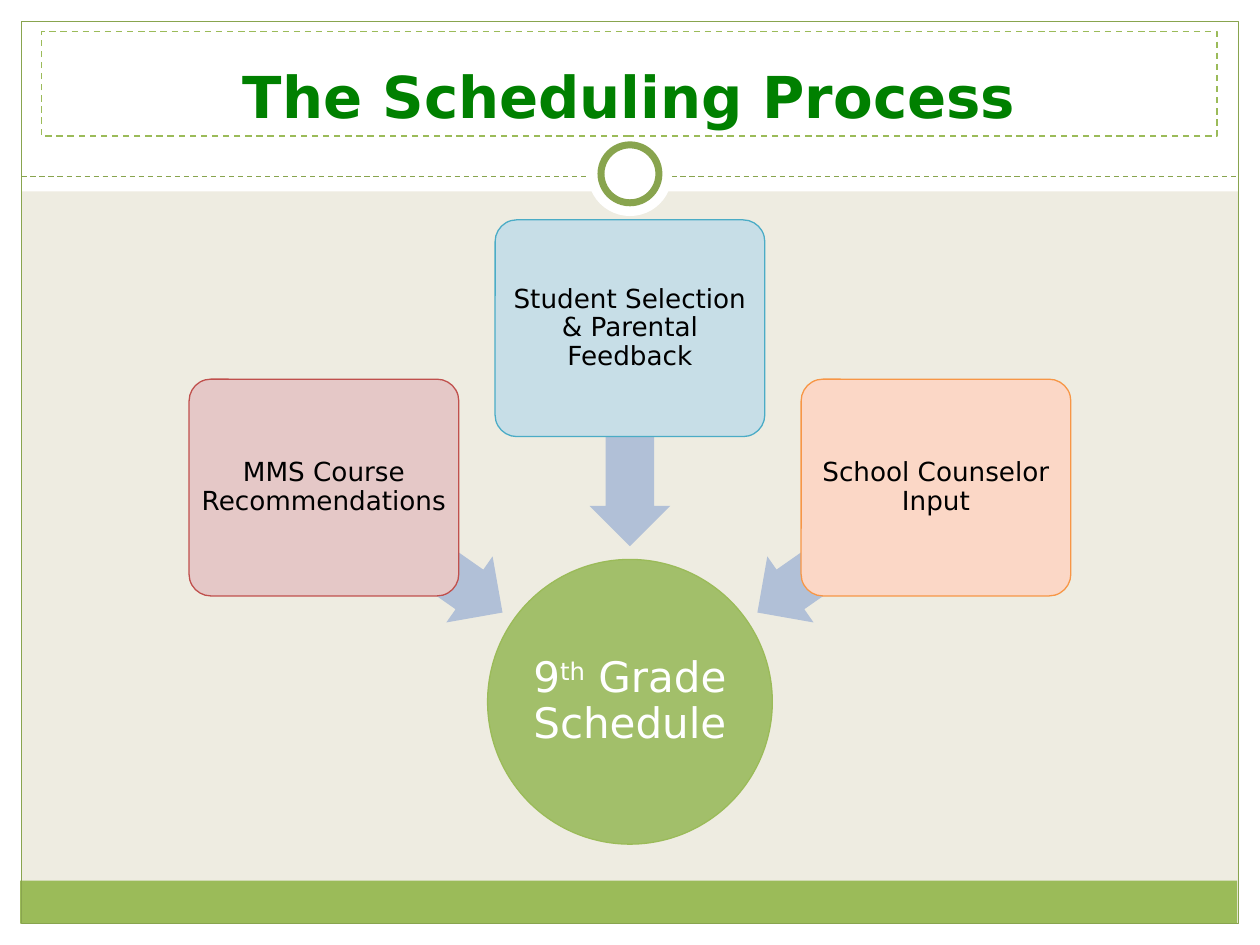
import math
import pptx
import pptx.util
import pptx.dml.color
import pptx.enum.dml
import pptx.enum.shapes
import pptx.enum.text
import pptx.oxml.ns
from lxml import etree

Inches, Pt = pptx.util.Inches, pptx.util.Pt
KIND = pptx.enum.shapes.MSO_SHAPE
ANCHOR = pptx.enum.text.MSO_ANCHOR
DASH = pptx.enum.dml.MSO_LINE.DASH
FONT = "DejaVu Sans"

# Content
TITLE = "The Scheduling Process"
GOAL = [("9", 0), ("th", 30000), (" Grade Schedule", 0)]
CARDS = [  # text, angle from the goal, fill, line
    ("MMS Course Recommendations", 215, "E5C8C7", "C0504D"),
    ("Student Selection & Parental Feedback", 270, "C7DEE7", "4BACC6"),
    ("School Counselor Input", 325, "FBD7C6", "F79646"),
]
BANDS = [  # left, top, width, height, fill
    (0, 7.33, 10, 0.17, "FFFFFF"),
    (0, 0, 10, 1.52, "FFFFFF"),
    (0, 0, 0.17, 7.5, "FFFFFF"),
    (9.83, 0, 0.17, 7.5, "FFFFFF"),
    (0.16, 6.99, 9.66, 0.34, "9BBB59"),
]

# Sizes
MID, HUB = 5, 5.57
GOAL_D = 2.26
CARD_W, CARD_H = 2.14, 1.72
ARROW_W, ARROW_H = 1.73, 0.64
ARROW_R = 2.1
CARD_R = ARROW_R + ARROW_W / 2

deck = pptx.Presentation()
deck.slide_width, deck.slide_height = Inches(10), Inches(7.5)
slide = deck.slides.add_slide(deck.slide_layouts[5])
shapes = slide.shapes


def color(code):
    return pptx.dml.color.RGBColor.from_string(code)


def paint(item, fill=None, line=None, width=0.75):
    if fill:
        item.fill.solid()
        item.fill.fore_color.rgb = color(fill)
    else:
        item.fill.background()
    if line:
        item.line.color.rgb = color(line)
        item.line.width = Pt(width)
    else:
        item.line.fill.background()


def add(kind, left, top, w, h, *style):
    item = shapes.add_shape(kind, Inches(left), Inches(top), Inches(w), Inches(h))
    item.shadow.inherit = False
    paint(item, *style)
    return item


def center(kind, x, y, w, h, *style):
    return add(kind, x - w / 2, y - h / 2, w, h, *style)


def write(item, parts, size, code, pad):
    frame = item.text_frame
    frame.word_wrap = True
    frame.vertical_anchor = ANCHOR.MIDDLE
    frame.margin_left = frame.margin_right = Inches(pad)
    frame.margin_top = frame.margin_bottom = Inches(pad)
    para = frame.paragraphs[0]
    para.alignment = pptx.enum.text.PP_ALIGN.CENTER
    para.line_spacing = 0.9
    for text, lift in parts:
        run = para.add_run()
        run.text = text
        run.font.name, run.font.size = FONT, Pt(size)
        run.font.color.rgb = color(code)
        if lift:
            run.font._element.set("baseline", str(lift))


# Background, bands and frame
slide.background.fill.solid()
slide.background.fill.fore_color.rgb = color("EEECE1")
for *spot, fill in BANDS:
    add(KIND.RECTANGLE, *spot, fill)
add(KIND.RECTANGLE, 0.17, 0.17, 9.66, 7.16, None, "88A44E")

# Dashed rule and ring
rule = shapes.add_connector(pptx.enum.shapes.MSO_CONNECTOR.STRAIGHT,
                            Inches(0.17), Inches(1.4), Inches(9.83), Inches(1.4))
rule.line.color.rgb = color("88A44E")
rule.line.width = Pt(0.75)
rule.line.dash_style = DASH
etree.SubElement(rule._element.spPr, pptx.oxml.ns.qn("a:effectLst"))
center(KIND.OVAL, MID, 1.38, 0.67, 0.67, "FFFFFF")
center(KIND.OVAL, MID, 1.38, 0.46, 0.46, "FFFFFF", "88A44E", 4)

# Title, brought in front of the bands
title = shapes.title
title.left, title.top = Inches(0.33), Inches(0.25)
title.width, title.height = Inches(9.33), Inches(0.83)
paint(title, "FFFFFF", "9BBB59", 0.9)
title.line.dash_style = DASH
frame = title.text_frame
frame.text = TITLE
frame.auto_size = pptx.enum.text.MSO_AUTO_SIZE.NONE
frame.vertical_anchor = ANCHOR.BOTTOM
frame.paragraphs[0].alignment = pptx.enum.text.PP_ALIGN.CENTER
font = frame.paragraphs[0].runs[0].font
font.name, font.size, font.bold = FONT, Pt(33), True
font.color.rgb = color("008000")
title._element.getparent().append(title._element)

# Goal circle
goal = center(KIND.OVAL, MID, HUB, GOAL_D, GOAL_D, "A2BF6A", "9BBB59")
write(goal, GOAL, 24, "FFFFFF", 0.02)

# Cards around the goal, each with an arrow pointing inward
for text, angle, fill, line in CARDS:
    dx, dy = math.cos(math.radians(angle)), math.sin(math.radians(angle))
    arrow = center(KIND.LEFT_ARROW, MID + ARROW_R * dx, HUB + ARROW_R * dy,
                   ARROW_W, ARROW_H, "B1C0D7")
    arrow.rotation = angle
    arrow.adjustments[0], arrow.adjustments[1] = 0.6, 0.5
    card = center(KIND.ROUNDED_RECTANGLE, MID + CARD_R * dx, HUB + CARD_R * dy,
                  CARD_W, CARD_H, fill, line)
    card.adjustments[0] = 0.1
    write(card, [(text, 0)], 15, "000000", 0.03)

deck.save("out.pptx")
